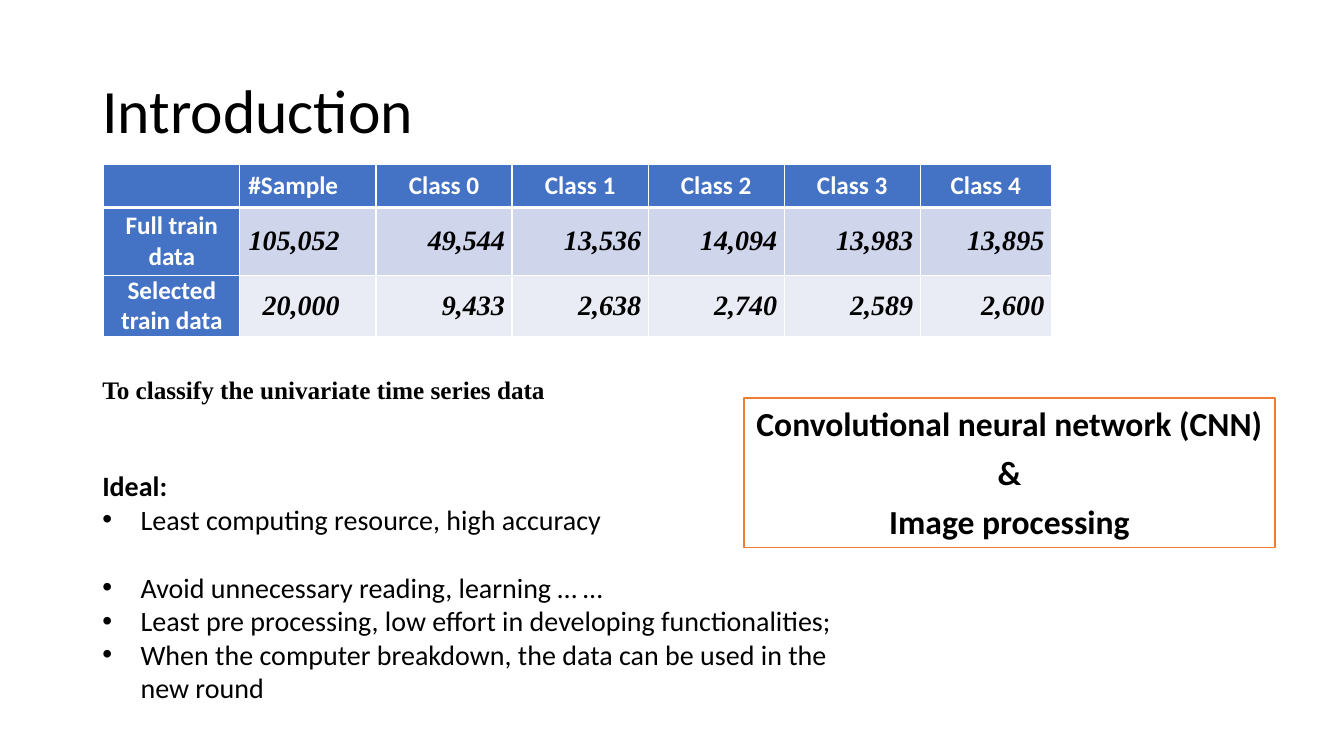
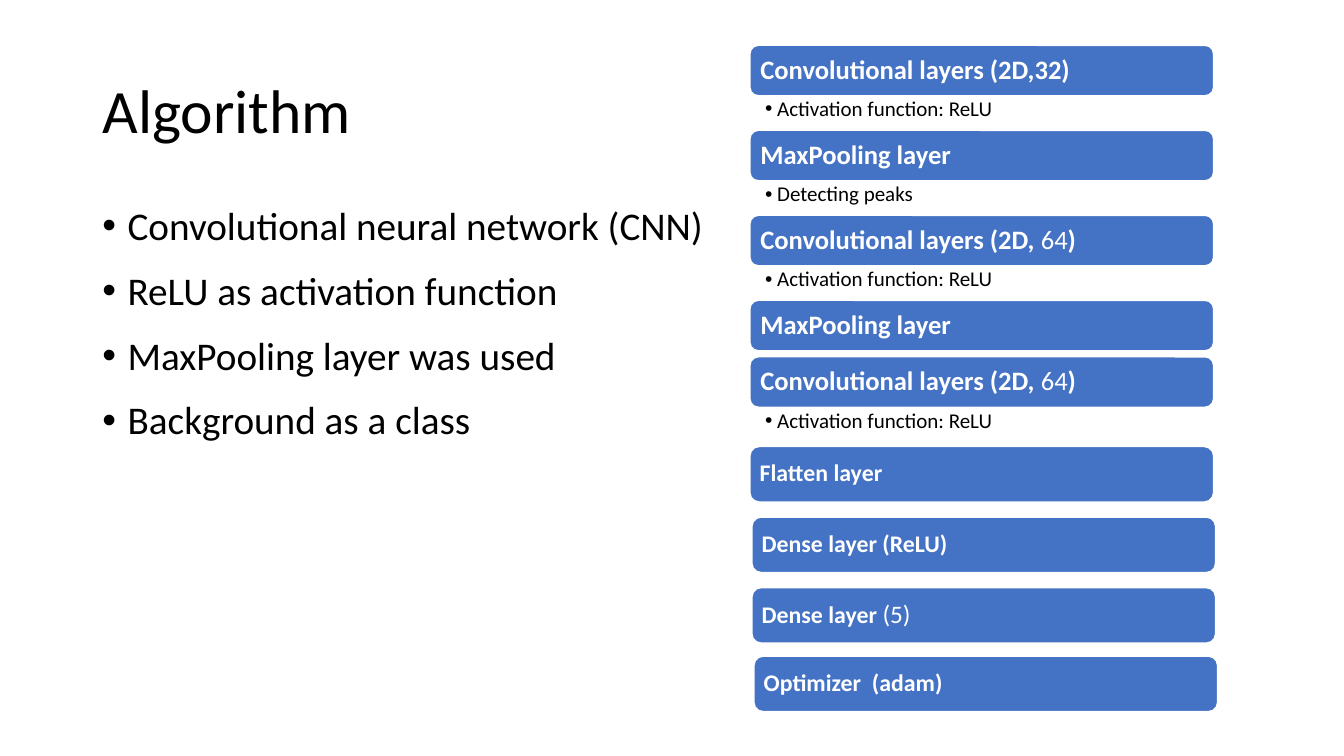
from collections import namedtuple

from lxml import etree
from pptx import Presentation
from pptx.dml.color import RGBColor
from pptx.enum.shapes import MSO_SHAPE
from pptx.enum.text import MSO_ANCHOR, MSO_AUTO_SIZE, PP_ALIGN
from pptx.oxml.ns import qn
from pptx.util import Inches, Pt

BLACK = RGBColor(0x00, 0x00, 0x00)
WHITE = RGBColor(0xFF, 0xFF, 0xFF)
BLUE = RGBColor(0x44, 0x72, 0xC4)
ORANGE = RGBColor(0xED, 0x7D, 0x31)
BAND_DARK = RGBColor(0xCF, 0xD5, 0xEA)
BAND_LIGHT = RGBColor(0xE9, 0xEB, 0xF5)

SANS = "Calibri"
SERIF = "Times New Roman"

LEFT, CENTER, RIGHT = PP_ALIGN.LEFT, PP_ALIGN.CENTER, PP_ALIGN.RIGHT
TOP, MIDDLE = MSO_ANCHOR.TOP, MSO_ANCHOR.MIDDLE
RECTANGLE, ROUNDED = MSO_SHAPE.RECTANGLE, MSO_SHAPE.ROUNDED_RECTANGLE
NO_FIT = MSO_AUTO_SIZE.NONE

GRID_COLUMNS, GRID_ROWS = 160, 90
UNIT = Inches(1) // 12
LAYOUT_TITLE_BODY, LAYOUT_TITLE = 1, 5

Box = namedtuple("Box", "left top width height")

TITLE_BOX = Box(11, 4.8, 138, 17.4)
TABLE_BOX = Box(12.36, 19.56, 112.8, 20.52)
STATEMENT_BOX = Box(11, 43.92, 55.7, 4.8)
IDEAL_BOX = Box(11, 55.2, 90.84, 34)
CALLOUT_BOX = Box(88.56, 47.4, 63.24, 17.76)
BODY_BOX = Box(11, 24, 138, 57.12)
STACK_BOX = Box(89.28, 5.4, 55.2, 80)

SAMPLE_TABLE = [
    ["", "#Sample", "Class 0", "Class 1", "Class 2", "Class 3", "Class 4"],
    ["Full train data", "105,052", "49,544", "13,536", "14,094", "13,983", "13,895"],
    ["Selected train data", "20,000", "9,433", "2,638", "2,740", "2,589", "2,600"],
]
IDEALS = [
    "Least computing resource, high accuracy",
    "Avoid unnecessary reading, learning … …",
    "Least pre processing, low effort in developing functionalities;",
    "When the computer breakdown, the data can be used in the new round",
]
METHODS = ["Convolutional neural network (CNN)", "&", "Image processing"]
POINTS = [
    "Convolutional neural network (CNN)",
    "ReLU as activation function",
    "MaxPooling layer was used",
    "Background as a class",
]
ACTIVATION = "Activation function: ReLU"
SECOND_CONVOLUTION = [("Convolutional layers (2D,", True), (" 64", False), (")", True)]
NOTED_LAYERS = [
    ([("Convolutional layers (2D,32)", True)], ACTIVATION),
    ([("MaxPooling layer", True)], "Detecting peaks"),
    (SECOND_CONVOLUTION, ACTIVATION),
    ([("MaxPooling layer", True)], None),
    (SECOND_CONVOLUTION, ACTIVATION),
]
FINAL_LAYERS = [
    (0, 47.76, [("Flatten layer", True)]),
    (0.24, 56.16, [("Dense layer (ReLU)", True)]),
    (0.24, 64.56, [("Dense layer ", True), ("(5)", False)]),
    (0.48, 72.72, [("Optimizer  (adam)", True)]),
]


def emu(box):
    return [round(length * UNIT) for length in box]


def move(shape, box):
    shape.left, shape.top, shape.width, shape.height = emu(box)


def style(para, size, color=BLACK, bold=False, italic=False, font=SANS, align=LEFT):
    para.alignment = align
    para.font.name = font
    para.font.size = Pt(size)
    para.font.bold = bold
    para.font.italic = italic
    para.font.color.rgb = color


def add_bullet(para, indent):
    properties = para._p.get_or_add_pPr()
    properties.set("marL", str(Inches(indent)))
    properties.set("indent", str(-Inches(indent)))
    etree.SubElement(properties, qn("a:buFont")).set("typeface", "Arial")
    etree.SubElement(properties, qn("a:buChar")).set("char", "•")


def write(frame, lines):
    paras = []
    for index, line in enumerate(lines):
        para = frame.add_paragraph() if index else frame.paragraphs[0]
        para.add_run().text = line
        paras.append(para)
    return paras


def set_margins(area, horizontal, vertical):
    area.margin_left = area.margin_right = Inches(horizontal)
    area.margin_top = area.margin_bottom = Inches(vertical)


def add_text(page, box, lines, wrap=True):
    frame = page.shapes.add_textbox(*emu(box)).text_frame
    frame.word_wrap = wrap
    return frame, write(frame, lines)


def add_panel(page, kind, box, fill, line):
    panel = page.shapes.add_shape(kind, *emu(box))
    panel.shadow.inherit = False
    panel.fill.solid()
    panel.fill.fore_color.rgb = fill
    panel.line.color.rgb = line
    panel.line.width = Pt(1)
    return panel


def add_page(deck, layout, title):
    page = deck.slides.add_slide(deck.slide_layouts[layout])
    move(page.shapes.title, TITLE_BOX)
    frame = page.shapes.title.text_frame
    frame.auto_size = NO_FIT
    frame.vertical_anchor = MIDDLE
    para, = write(frame, [title])
    para.line_spacing = 0.9
    style(para, 44)
    return page


def add_borders(cell, bottom):
    properties = cell._tc.get_or_add_tcPr()
    widths = {"lnL": 1, "lnR": 1, "lnT": 1, "lnB": bottom}
    for index, (side, width) in enumerate(widths.items()):
        line = etree.Element(qn(f"a:{side}"), w=str(Pt(width)))
        fill = etree.SubElement(line, qn("a:solidFill"))
        etree.SubElement(fill, qn("a:srgbClr")).set("val", str(WHITE))
        properties.insert(index, line)


def add_sample_table(page, box):
    row_heights = [5.16, 8.04, 7.32]
    column_widths = [16.2] * 6 + [15.6]
    frame = page.shapes.add_table(len(row_heights), len(column_widths), *emu(box))
    table = frame.table
    table.first_col = True
    for column, width in zip(table.columns, column_widths):
        column.width = round(width * UNIT)
    for row, height in zip(table.rows, row_heights):
        row.height = round(height * UNIT)
    for row_index, values in enumerate(SAMPLE_TABLE):
        for column_index, value in enumerate(values):
            cell = table.cell(row_index, column_index)
            heading = row_index == 0 or column_index == 0
            band = BAND_DARK if row_index == 1 else BAND_LIGHT
            cell.fill.solid()
            cell.fill.fore_color.rgb = BLUE if heading else band
            cell.vertical_anchor = MIDDLE
            set_margins(cell, 0.07, 0)
            if column_index == 1:
                cell.margin_right = Inches(0.36)
            add_borders(cell, 1 if row_index else 3)
            if not value:
                continue
            para, = write(cell.text_frame, [value])
            if heading:
                style(para, 18, WHITE, bold=True, align=CENTER)
            else:
                style(para, 20, bold=True, italic=True, font=SERIF, align=RIGHT)


def add_ideals(page, box):
    heading, *items = add_text(page, box, ["Ideal:"] + IDEALS)[1]
    style(heading, 20, bold=True)
    for item in items:
        add_bullet(item, 0.38)
        style(item, 20)
    items[0].space_after = Pt(24.4)


def add_callout(page, box):
    frame = add_panel(page, RECTANGLE, box, WHITE, ORANGE).text_frame
    frame.word_wrap = False
    frame.vertical_anchor = TOP
    for para in write(frame, METHODS):
        para.space_after = Pt(6)
        style(para, 24, bold=True, align=CENTER)


def add_points(page, box):
    body = page.placeholders[1]
    move(body, box)
    body.text_frame.auto_size = NO_FIT
    for para in write(body.text_frame, POINTS):
        add_bullet(para, 0.25)
        para.line_spacing = 0.9
        para.space_before = Pt(10)
        para.space_after = Pt(6)
        style(para, 28)


def add_layer(page, box, spans, size, margin, plain_size):
    frame = add_panel(page, ROUNDED, box, BLUE, WHITE).text_frame
    frame.word_wrap = True
    frame.vertical_anchor = MIDDLE
    set_margins(frame, margin, margin)
    para = frame.paragraphs[0]
    para.line_spacing = 0.9
    style(para, size, WHITE, bold=True)
    for text, bold in spans:
        span = para.add_run()
        span.text = text
        if not bold:
            span.font.bold = False
            span.font.size = Pt(plain_size)


def add_note(page, box, text):
    frame, (para,) = add_text(page, box, [text])
    set_margins(frame, 0.15, 0.03)
    add_bullet(para, 0.12)
    para.line_spacing = 0.9
    style(para, 15)


def add_layer_stack(page, box):
    bar_height, note_height, gap, final_height = 6, 4.12, 0.72, 6.6
    top = box.top
    for spans, note in NOTED_LAYERS:
        add_layer(page, Box(box.left, top, box.width, bar_height), spans, 19, 0.08, 19)
        top += bar_height
        if note:
            add_note(page, Box(box.left, top, box.width, note_height), note)
        top += note_height if note else gap
    for shift, offset, spans in FINAL_LAYERS:
        layer_box = Box(box.left + shift, box.top + offset, box.width, final_height)
        add_layer(page, layer_box, spans, 17, 0.07, 18)


def build_introduction(deck):
    page = add_page(deck, LAYOUT_TITLE, "Introduction")
    add_sample_table(page, TABLE_BOX)
    add_ideals(page, IDEAL_BOX)
    statement = ["To classify the univariate time series data"]
    para, = add_text(page, STATEMENT_BOX, statement, wrap=False)[1]
    style(para, 18, bold=True, font=SERIF)
    add_callout(page, CALLOUT_BOX)


def build_algorithm(deck):
    page = add_page(deck, LAYOUT_TITLE_BODY, "Algorithm")
    add_points(page, BODY_BOX)
    add_layer_stack(page, STACK_BOX)


def main():
    deck = Presentation()
    deck.slide_width = GRID_COLUMNS * UNIT
    deck.slide_height = GRID_ROWS * UNIT
    build_introduction(deck)
    build_algorithm(deck)
    deck.save("out.pptx")


if __name__ == "__main__":
    main()
